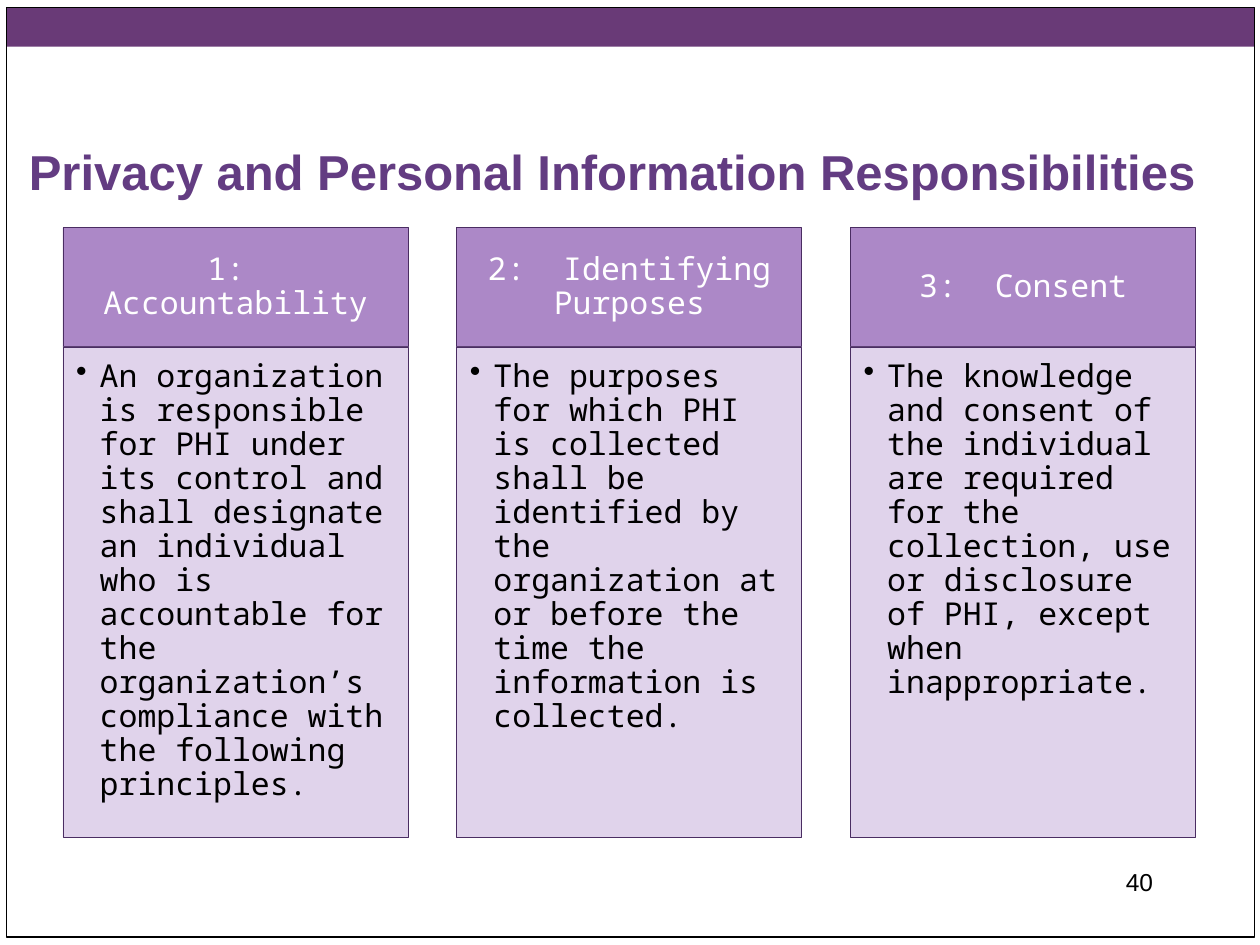
from lxml.etree import SubElement
from pptx import Presentation
from pptx.dml.color import RGBColor
from pptx.enum.shapes import MSO_SHAPE as Shape
from pptx.enum.text import MSO_ANCHOR as Anchor, PP_ALIGN as Align
from pptx.oxml.ns import qn
from pptx.util import Pt

COLORS = {
    "banner": "693A77",
    "title": "633C82",
    "header": "A37CC2",
    "body": "E0D3EB",
    "outline": "4A2D62",
    "black": "000000",
    "white": "FFFFFF",
}
MONO = "Noto Sans Mono"

PRINCIPLES = [
    ("1:  Accountability",
     "An organization is responsible for PHI under its control and shall "
     "designate an individual who is accountable for the organization’s "
     "compliance with the following principles."),
    ("2:  Identifying Purposes",
     "The purposes for which PHI is collected shall be identified by the "
     "organization at or before the time the information is collected."),
    ("3:  Consent",
     "The knowledge and consent of the individual are required for the "
     "collection, use or disclosure of PHI, except when inappropriate."),
]

COLUMN_LEFT, COLUMN_WIDTH, COLUMN_PITCH = 36, 197.3, 225
HEADER_TOP, HEADER_HEIGHT, BODY_HEIGHT = 130.2, 68.1, 280


def rgb(name):
    return RGBColor.from_string(COLORS[name])


def add_box(slide, left, top, width, height, fill=None, line=None,
            line_width=0.5, alpha=None):
    """Add a rectangle; alpha is the opacity of its fill in percent."""
    box = slide.shapes.add_shape(
        Shape.RECTANGLE, Pt(left), Pt(top), Pt(width), Pt(height))
    box.shadow.inherit = False
    if fill:
        box.fill.solid()
        box.fill.fore_color.rgb = rgb(fill)
        if alpha:
            color = box.fill._xPr.find(qn("a:solidFill"))[0]
            SubElement(color, qn("a:alpha"), val=str(alpha * 1000))
    else:
        box.fill.background()
    if line:
        box.line.color.rgb = rgb(line)
        box.line.width = Pt(line_width)
    else:
        box.line.fill.background()
    return box


def add_label(slide, left, top, width, height):
    return slide.shapes.add_textbox(Pt(left), Pt(top), Pt(width), Pt(height))


def write(holder, text, size=18, font=MONO, color="black", bold=False,
          align=Align.LEFT, anchor=Anchor.TOP, insets=(7.2, 3.6, 7.2, 3.6),
          line_spacing=1.0, bullet_indent=0):
    """Put one paragraph in a shape; insets run left, top, right, bottom."""
    frame = holder.text_frame
    frame.word_wrap = True
    frame.vertical_anchor = anchor
    (frame.margin_left, frame.margin_top,
     frame.margin_right, frame.margin_bottom) = map(Pt, insets)
    paragraph = frame.paragraphs[0]
    paragraph.alignment = align
    paragraph.line_spacing = line_spacing
    if bullet_indent:
        properties = paragraph._p.get_or_add_pPr()
        properties.set("marL", str(Pt(bullet_indent)))
        properties.set("indent", str(-Pt(bullet_indent)))
        SubElement(properties, qn("a:buChar"), char="•")
    run = paragraph.add_run()
    run.text = text
    run.font.size = Pt(size)
    run.font.name = font
    run.font.bold = bold
    run.font.color.rgb = rgb(color)


def add_principle(slide, left, heading, description):
    header = add_box(slide, left, HEADER_TOP, COLUMN_WIDTH, HEADER_HEIGHT,
                     fill="header", line="outline", alpha=90)
    write(header, heading, color="white", align=Align.CENTER,
          anchor=Anchor.MIDDLE, insets=(10, 5.8, 10, 5.8), line_spacing=0.9)
    body = add_box(slide, left, HEADER_TOP + HEADER_HEIGHT, COLUMN_WIDTH,
                   BODY_HEIGHT, fill="body", line="outline")
    write(body, description, insets=(7.5, 7.5, 10, 11.3), line_spacing=0.9,
          bullet_indent=13.5)


def main():
    deck = Presentation()
    deck.slide_width, deck.slide_height = Pt(720), Pt(540)
    slide = deck.slides.add_slide(deck.slide_layouts[6])

    add_box(slide, 3.75, 4.4, 713.3, 22.3, fill="banner")
    add_box(slide, 3.75, 4.4, 713.3, 531, line="black", line_width=0.75)

    title = add_label(slide, 9.4, 46, 686, 72)
    write(title, "Privacy and Personal Information Responsibilities", size=28,
          font="Arial", color="title", bold=True, anchor=Anchor.BOTTOM)

    for index, (heading, description) in enumerate(PRINCIPLES):
        add_principle(slide, COLUMN_LEFT + index * COLUMN_PITCH,
                      heading, description)

    page_number = add_label(slide, 516, 492, 150, 36)
    write(page_number, "40", size=14, font="Arial", align=Align.RIGHT)

    deck.save("out.pptx")


if __name__ == "__main__":
    main()
